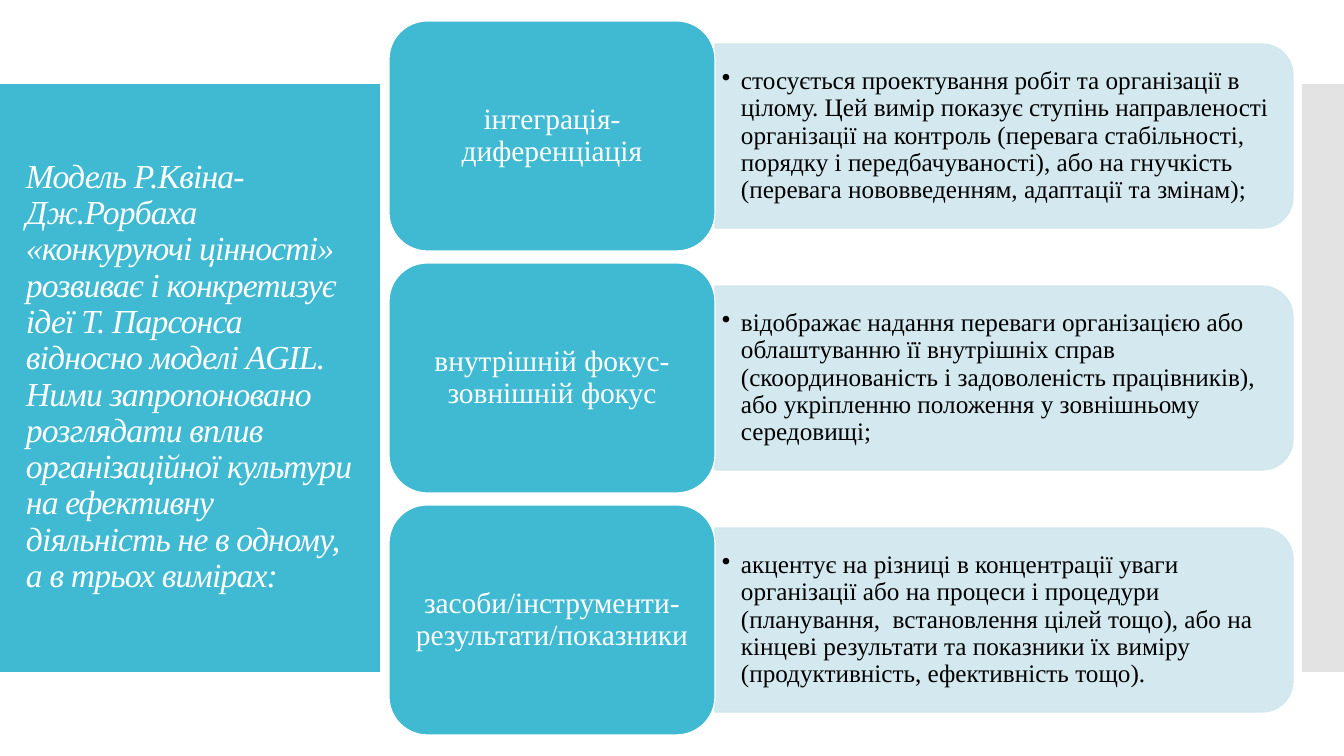
from lxml.etree import SubElement as Sub
from pptx import Presentation as Deck
from pptx.dml.color import RGBColor as Rgb
from pptx.enum.shapes import MSO_SHAPE as Form
from pptx.enum.text import MSO_ANCHOR as Anchor, MSO_AUTO_SIZE as Fit, PP_ALIGN as Align
from pptx.oxml.ns import qn
from pptx.util import Emu, Pt

SCALE = 12192000 / 1344
THEME = {
    "teal": "40BAD2", "pale": "CFE7EE", "gray": "C8C8C8",
    "white": "FFFFFF", "black": "000000", "face": "Times New Roman",
    "title": 24, "label": 21, "body": 18, "line": 0.85,
}
TITLE = (
    "Модель Р.Квіна-Дж.Рорбаха «конкуруючі цінності» розвиває і конкретизує "
    "ідеї Т. Парсонса відносно моделі AGIL. Ними запропоновано розглядати вплив "
    "організаційної культури на ефективну діяльність не в одному, а в трьох вимірах:"
)
ROWS = [
    ("інтеграція-диференціація",
     "стосується проектування робіт та організації в цілому. Цей вимір показує "
     "ступінь направленості організації на контроль (перевага стабільності, порядку "
     "і передбачуваності), або на гнучкість (перевага нововведенням, адаптації та змінам);"),
    ("внутрішній фокус-зовнішній фокус",
     "відображає надання переваги організацією або облаштуванню її внутрішніх справ "
     "(скоординованість і задоволеність працівників), або укріпленню положення у "
     "зовнішньому середовищі;"),
    ("засоби/інструменти-результати/показники",
     "акцентує на різниці в концентрації уваги організації або на процеси і процедури "
     "(планування,  встановлення цілей тощо), або на кінцеві результати та показники "
     "їх виміру (продуктивність, ефективність тощо)."),
]


def px(num):
    """Turn px into EMU."""
    return Emu(round(num * SCALE))


def tint(name):
    """Return a theme colour."""
    return Rgb.from_string(THEME[name])


def put(item, form):
    """Set each value of a dict as an attribute."""
    for key, val in form.items():
        setattr(item, key, val)


def draw(slide, kind, box, fill, line=None, alpha=100):
    """Add a filled shape with an optional line and opacity in percent."""
    shape = slide.shapes.add_shape(kind, *map(px, box))
    shape.shadow.inherit = False
    shape.fill.solid()
    shape.fill.fore_color.rgb = tint(fill)
    if line:
        shape.line.color.rgb = tint(line)
        shape.line.width = Pt(THEME["line"])
    else:
        shape.line.fill.background()
    if alpha < 100:
        for node in shape.element.spPr.iter(qn("a:srgbClr")):
            Sub(node, qn("a:alpha"), val=str(alpha * 1000))
    return shape


def write(shape, text, size, color, align, pad, slant=False):
    """Fill a shape with one formatted paragraph and return it."""
    frame = shape.text_frame
    side, edge = map(px, pad)
    put(frame, {
        "word_wrap": True, "auto_size": Fit.NONE, "vertical_anchor": Anchor.MIDDLE,
        "margin_left": side, "margin_right": side,
        "margin_top": edge, "margin_bottom": edge,
    })
    para = frame.paragraphs[0]
    put(para, {"alignment": align, "line_spacing": 0.9})
    run = para.add_run()
    run.text = text
    put(run.font, {"name": THEME["face"], "size": Pt(THEME[size]), "italic": slant})
    run.font.color.rgb = tint(color)
    return para


def panel(slide, box):
    """Draw the left panel with the title in it."""
    draw(slide, Form.RECTANGLE, box, "teal")
    left, top, wide, high = box
    title = slide.shapes.title
    spots = map(px, (left + 16, top + 11, wide - 27, high - 24))
    put(title, dict(zip(("left", "top", "width", "height"), spots)))
    para = write(title, TITLE, "title", "white", Align.LEFT, (10, 5), True)
    para.runs[0].font._element.set("spc", "-60")


def row(slide, box, label, text):
    """Draw one dimension: the detail strip and its label."""
    left, top, wide, high = box
    split, deep = 326, 184
    span = wide - split
    start, mid = left + split, top + high / 2
    turn = (start + (span - deep) / 2, mid - span / 2, deep, span)
    strip = draw(slide, Form.ROUND_2_SAME_RECTANGLE, turn, "pale", "pale", 90)
    strip.rotation = 90
    area = slide.shapes.add_textbox(*map(px, (start, mid - 83, span - 9, 166)))
    para = write(area, text, "body", "black", Align.LEFT, (7, 4))
    props = para._p.get_or_add_pPr()
    put_in = {"marL": px(19), "indent": px(-19)}
    for key, val in put_in.items():
        props.set(key, str(val))
    Sub(props, qn("a:buChar"), char="•")
    card = draw(slide, Form.ROUNDED_RECTANGLE, (left, top, split, high), "teal", "white")
    write(card, label, "label", "white", Align.CENTER, (9, 4))


def main():
    """Build and save the slide."""
    deck = Deck()
    put(deck, {"slide_width": px(1344), "slide_height": px(756)})
    slide = deck.slides.add_slide(deck.slide_layouts[5])
    panel(slide, (0, 84, 380, 588))
    draw(slide, Form.RECTANGLE, (1302, 84, 42, 588), "gray", alpha=50)
    for num, (label, text) in enumerate(ROWS):
        row(slide, (389, 21 + 242 * num, 904, 230), label, text)
    tree = slide.shapes.title.element.getparent()
    tree.insert(4, slide.shapes.title.element)
    deck.save("out.pptx")


if __name__ == "__main__":
    main()
